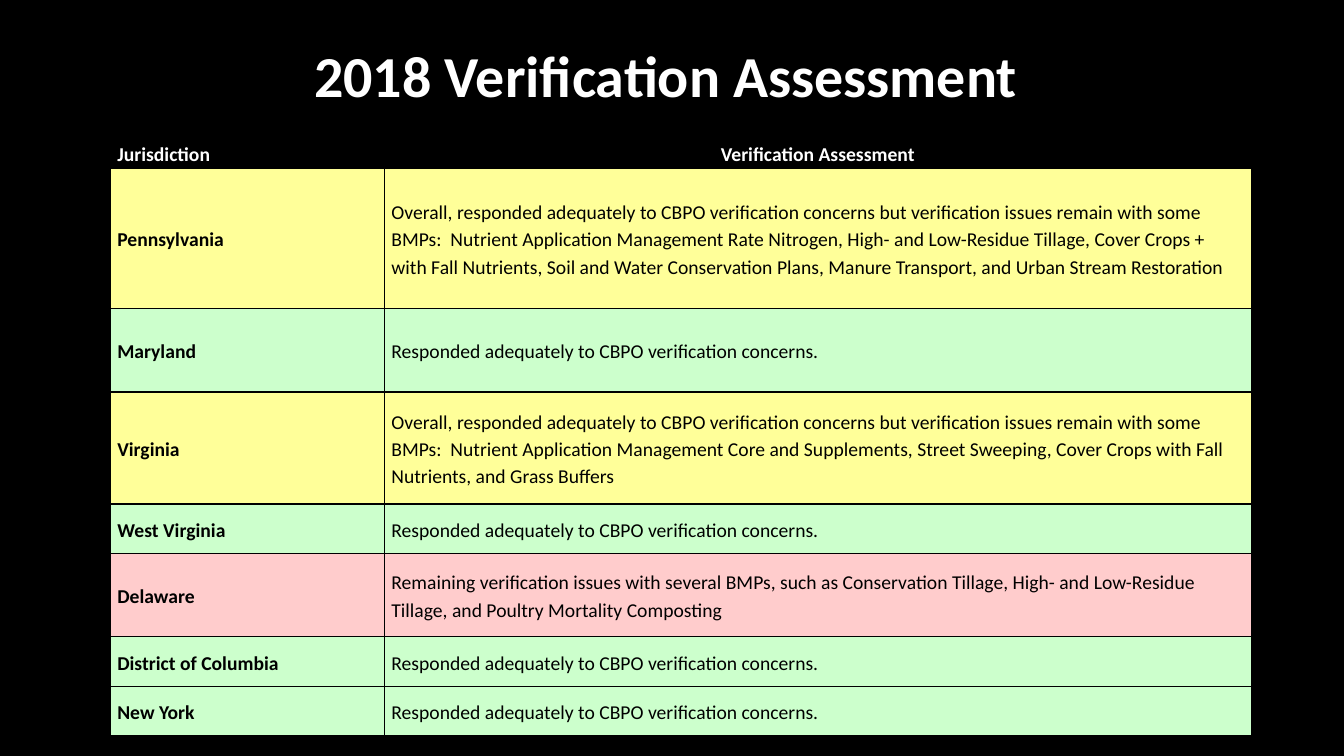
from lxml.etree import SubElement
from pptx import Presentation
from pptx.dml.color import RGBColor
from pptx.enum.text import MSO_ANCHOR, PP_ALIGN
from pptx.oxml.ns import qn
from pptx.util import Pt

COLORS = {"black": "000000", "white": "FFFFFF", "yellow": "FFFF99",
          "green": "CCFFCC", "red": "FFCCCC"}
ADEQUATE = "Responded adequately to CBPO verification concerns."
REMAIN = ("Overall, responded adequately to CBPO verification concerns "
          "but verification issues remain with some BMPs:  ")
ROWS = [
    ("Jurisdiction", "Verification Assessment", None, 22.3),
    ("Pennsylvania", REMAIN + "Nutrient Application Management Rate Nitrogen, "
     "High- and Low-Residue Tillage, Cover Crops + with Fall Nutrients, Soil and "
     "Water Conservation Plans, Manure Transport, and Urban Stream Restoration",
     "yellow", 100.1),
    ("Maryland", ADEQUATE, "green", 59.8),
    ("Virginia", REMAIN + "Nutrient Application Management Core and Supplements, "
     "Street Sweeping, Cover Crops with Fall Nutrients, and Grass Buffers",
     "yellow", 79.9),
    ("West Virginia", ADEQUATE, "green", 35.2),
    ("Delaware", "Remaining verification issues with several BMPs, such as "
     "Conservation Tillage, High- and Low-Residue Tillage, and Poultry Mortality "
     "Composting", "red", 59.8),
    ("District of Columbia", ADEQUATE, "green", 35.2),
    ("New York", ADEQUATE, "green", 35.2),
]


def rgb(name):
    return RGBColor.from_string(COLORS[name])


def write(tf, text, size, color, bold, align, spacing):
    p = tf.paragraphs[0]
    p.alignment, p.line_spacing = align, spacing
    r = p.add_run()
    r.text = text
    font = {"name": "Calibri", "size": Pt(size), "bold": bold}
    for key, value in font.items():
        setattr(r.font, key, value)
    r.font.color.rgb = rgb(color)


prs = Presentation()
prs.slide_width, prs.slide_height = Pt(960), Pt(540)
s = prs.slides.add_slide(prs.slide_layouts[6])
s.background.fill.solid()
s.background.fill.fore_color.rgb = rgb("black")

table = s.shapes.add_table(len(ROWS), 2, Pt(78.8), Pt(97.9), Pt(815), Pt(427.5)).table
table.first_row = table.horz_banding = False
for column, width in zip(table.columns, (195.8, 619.2)):
    column.width = Pt(width)

cell_format = {"vertical_anchor": MSO_ANCHOR.MIDDLE, "margin_left": Pt(5),
               "margin_right": Pt(5), "margin_top": 0, "margin_bottom": 0}
for i, (jurisdiction, assessment, fill, height) in enumerate(ROWS):
    table.rows[i].height = Pt(height)
    header = i == 0
    for j, text in enumerate((jurisdiction, assessment)):
        cell = table.cell(i, j)
        for key, value in cell_format.items():
            setattr(cell, key, value)
        tcPr = cell._tc.get_or_add_tcPr()
        for side in ("a:lnL", "a:lnR", "a:lnT", "a:lnB"):
            ln = SubElement(tcPr, qn(side), w=str(Pt(1)))
            SubElement(SubElement(ln, qn("a:solidFill")), qn("a:srgbClr"),
                       val=COLORS["black"])
        if header:
            cell.fill.background()
        else:
            cell.fill.solid()
            cell.fill.fore_color.rgb = rgb(fill)
        write(cell.text_frame, text, 14, "white" if header else "black",
              header or j == 0,
              PP_ALIGN.CENTER if header and j else PP_ALIGN.LEFT, 1.15)

tf = s.shapes.add_textbox(Pt(195.1), Pt(26.6), Pt(570.2), Pt(59.8)).text_frame
tf.word_wrap = True
tf.vertical_anchor = MSO_ANCHOR.MIDDLE
write(tf, "2018 Verification Assessment ", 41.4, "white", True, PP_ALIGN.CENTER, 0.9)

prs.save("out.pptx")
